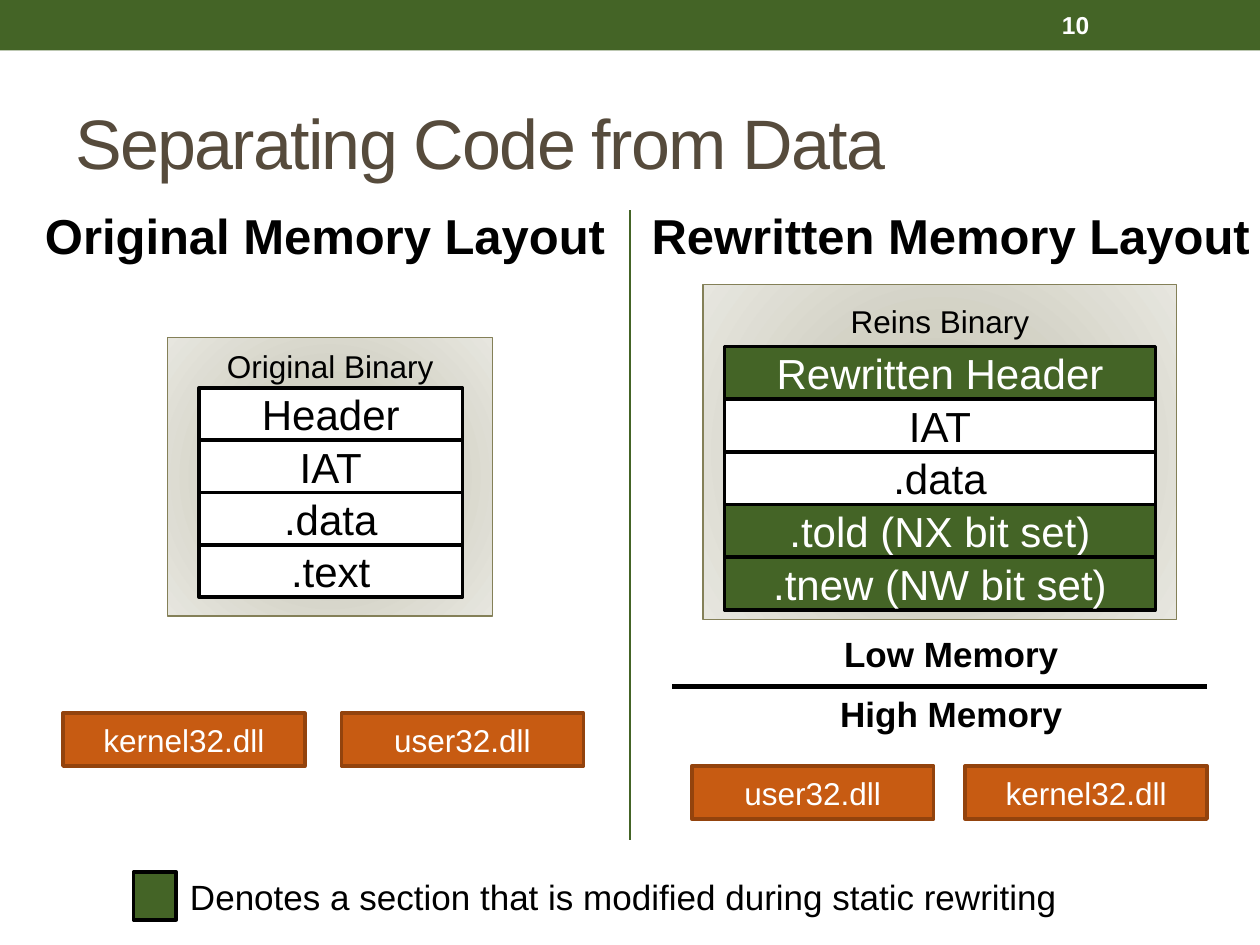
"""Build the slide comparing original and rewritten binary memory layouts."""
from dataclasses import dataclass

from pptx import Presentation, oxml, util as u
from pptx.dml.color import RGBColor
from pptx.enum import shapes, text
from pptx.oxml import ns


@dataclass(frozen=True)
class Theme:
    font: str = "Arial"
    green: str = "446426"
    orange: str = "C75B12"
    rust: str = "93430D"
    brown: str = "564B3C"
    olive: str = "848058"
    black: str = "000000"
    white: str = "FFFFFF"
    panel: tuple = ((0, "C3C1B5"), (45, "D2D1C4"), (100, "E7E6DF"))
    title: int = 40
    heading: int = 28
    row: int = 24
    note: int = 20
    label: int = 18
    number: int = 14
    border: float = 2.08


T = Theme()
ANCHOR = text.MSO_ANCHOR
ALIGN = text.PP_ALIGN


def write(sp, words, size, color, bold=False, align=ALIGN.CENTER, anchor=ANCHOR.MIDDLE):
    tf = sp.text_frame
    tf.word_wrap = True
    tf.vertical_anchor = anchor
    p = tf.paragraphs[0]
    p.text = words
    p.alignment = align
    p.font.name = T.font
    p.font.size = u.Pt(size)
    p.font.bold = bold
    p.font.color.rgb = RGBColor.from_string(color)
    return p


def box(x, y, w, h, fill, line=None, width=T.border):
    sp = s.shapes.add_shape(shapes.MSO_SHAPE.RECTANGLE, *map(u.Inches, (x, y, w, h)))
    sp.shadow.inherit = False
    sp.fill.solid()
    sp.fill.fore_color.rgb = RGBColor.from_string(fill)
    if line:
        sp.line.color.rgb = RGBColor.from_string(line)
        sp.line.width = u.Pt(width)
    else:
        sp.line.fill.background()
    return sp


prs = Presentation()
prs.slide_width, prs.slide_height = u.Inches(10), u.Inches(7.5)
s = prs.slides.add_slide(prs.slide_layouts[6])

box(0, 0, 10, 0.4, T.green)

panels = [
    ("Original Binary", (1.33, 2.68, 2.58, 2.21), 0.07),
    ("Reins Binary", (5.58, 2.26, 3.76, 2.66), 0.14),
]
stops = "".join(
    f'<a:gs pos="{pos * 1000}"><a:srgbClr val="{color}"/></a:gs>' for pos, color in T.panel
)
for name, area, inset in panels:
    sp = box(*area, T.white, T.olive, 0.75)
    solid = sp._element.spPr.find(ns.qn("a:solidFill"))
    solid.getparent().replace(solid, oxml.parse_xml(
        f'<a:gradFill {ns.nsdecls("a")}><a:gsLst>{stops}</a:gsLst><a:path path="circle">'
        '<a:fillToRect l="100000" t="100000" r="100000" b="100000"/></a:path></a:gradFill>'
    ))
    write(sp, name, T.label, T.black, anchor=ANCHOR.TOP)
    sp.text_frame.margin_top = u.Inches(inset)

stacks = [
    (1.58, 3.08, 2.09, 1.66, [("Header", False), ("IAT", False), (".data", False), (".text", False)]),
    (5.75, 2.75, 3.42, 2.09, [("Rewritten Header", True), ("IAT", False), (".data", False),
                              (".told (NX bit set)", True), (".tnew (NW bit set)", True)]),
]
for x, y, w, total, sections in stacks:
    h = total / len(sections)
    for i, (name, modified) in enumerate(sections):
        sp = box(x, y + i * h, w, h, T.green if modified else T.white, T.black)
        write(sp, name, T.row, T.white if modified else T.black)

libraries = [
    ("kernel32.dll", 0.5, 5.66),
    ("user32.dll", 2.71, 5.66),
    ("user32.dll", 5.49, 6.08),
    ("kernel32.dll", 7.66, 6.08),
]
for name, x, y in libraries:
    write(box(x, y, 1.92, 0.42, T.orange, T.rust), name, T.label, T.white)

box(1.06, 6.92, 0.34, 0.38, T.green, T.black)

lines = [((5, 1.67, 5, 6.67), T.green, 0.75), ((9.58, 5.45, 5.33, 5.45), T.black, 3)]
for ends, color, width in lines:
    c = s.shapes.add_connector(shapes.MSO_CONNECTOR.STRAIGHT, *map(u.Inches, ends))
    c.line.color.rgb = RGBColor.from_string(color)
    c.line.width = u.Pt(width)
    c._element.spPr.append(oxml.parse_xml(f'<a:effectLst {ns.nsdecls("a")}/>'))

labels = [
    ("Original Memory Layout", (0.08, 1.58, 5, 0.57), T.heading, T.black, True, ALIGN.CENTER, ANCHOR.TOP),
    ("Rewritten Memory Layout", (5, 1.58, 5.09, 0.57), T.heading, T.black, True, ALIGN.CENTER, ANCHOR.TOP),
    ("Low Memory", (5.67, 4.97, 3.76, 0.44), T.note, T.black, True, ALIGN.CENTER, ANCHOR.TOP),
    ("High Memory", (5.67, 5.45, 3.76, 0.44), T.note, T.black, True, ALIGN.CENTER, ANCHOR.TOP),
    ("Denotes a section that is modified during static rewriting", (1.41, 6.9, 7.34, 0.44),
     T.note, T.black, False, ALIGN.LEFT, ANCHOR.TOP),
    ("10", (8.33, 0.02, 1.17, 0.36), T.number, T.white, True, ALIGN.LEFT, ANCHOR.MIDDLE),
    ("Separating Code from Data", (0.5, 0.58, 9, 1.08), T.title, T.brown, False, ALIGN.LEFT, ANCHOR.MIDDLE),
]
for words, area, *style in labels:
    p = write(s.shapes.add_textbox(*map(u.Inches, area)), words, *style)
    if style[0] == T.title:
        p.runs[0]._r.get_or_add_rPr().set("spc", "-100")

prs.save("out.pptx")
